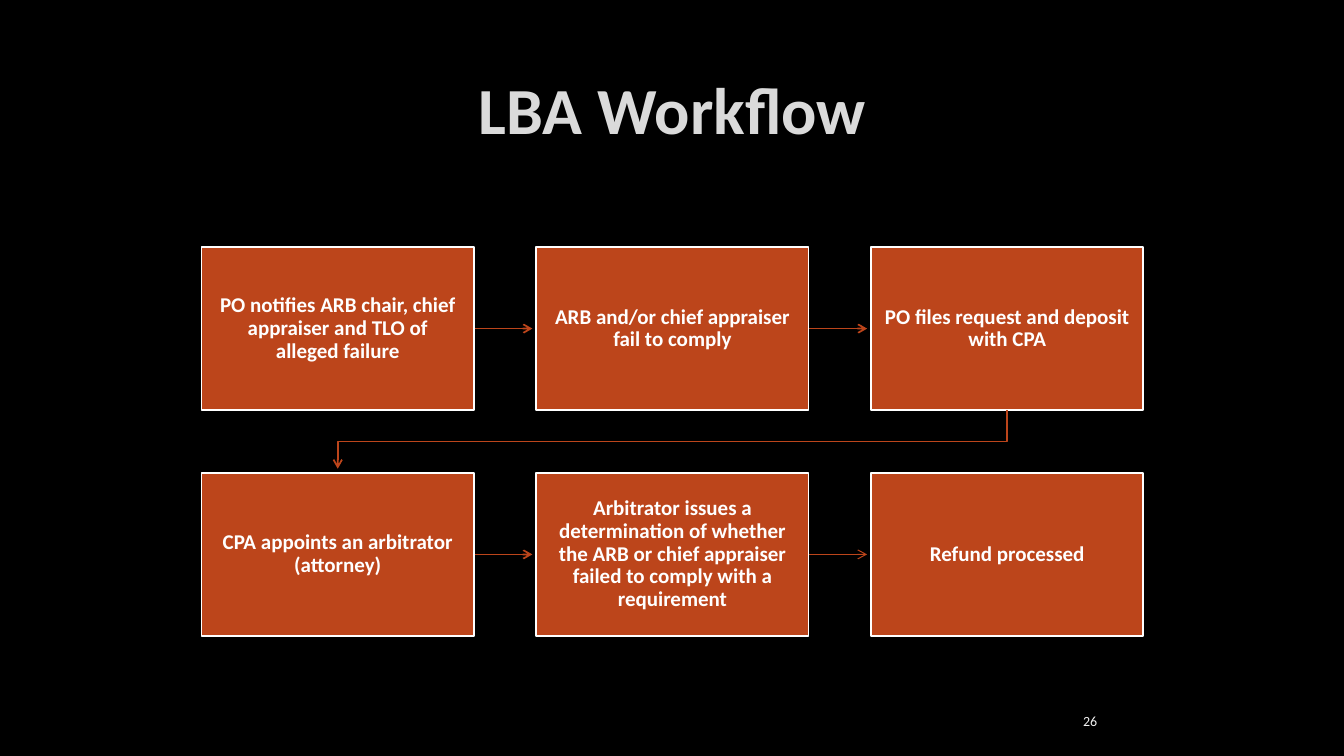
from pptx import Presentation
from pptx.dml.color import RGBColor
from pptx.enum import shapes, text
from pptx.oxml import ns
from pptx.util import Inches, Pt
from lxml import etree


def rgb(value):
    return RGBColor.from_string(value)


def style_arrow(sp, width):
    sp.line.color.rgb = rgb("BC451B")
    sp.line.width = Pt(width)
    ln = sp.line._get_or_add_ln()
    etree.SubElement(ln, ns.qn("a:tailEnd"), type="arrow")


prs = Presentation()
prs.slide_width = Inches(13.33)
prs.slide_height = Inches(7.5)
s = prs.slides.add_slide(prs.slide_layouts[5])
s.background.fill.solid()
s.background.fill.fore_color.rgb = rgb("000000")

title = s.shapes.title
title.left, title.top = Inches(1.99), Inches(0.35)
title.width, title.height = Inches(9.36), Inches(1.45)
title.text_frame.text = "LBA Workflow"
title.text_frame.vertical_anchor = text.MSO_ANCHOR.MIDDLE
p = title.text_frame.paragraphs[0]
p.alignment = text.PP_ALIGN.CENTER
p.font.name = "Calibri"
p.font.size = Pt(47)
p.font.bold = True
p.font.color.rgb = rgb("DADADA")

number = s.shapes.add_textbox(Inches(8.73), Inches(6.95), Inches(2.25), Inches(0.4))
tf = number.text_frame
tf.word_wrap = True
tf.vertical_anchor = text.MSO_ANCHOR.MIDDLE
p = tf.paragraphs[0]
p.text = "26"
p.alignment = text.PP_ALIGN.RIGHT
p.space_after = Pt(6)
p.font.name = "Calibri"
p.font.size = Pt(10)
p.font.color.rgb = rgb("F2F2F2")

steps = [
    "PO notifies ARB chair, chief appraiser and TLO of alleged failure",
    "ARB and/or chief appraiser fail to comply",
    "PO files request and deposit with CPA",
    "CPA appoints an arbitrator (attorney)",
    "Arbitrator issues a determination of whether the ARB or chief appraiser "
    "failed to comply with a requirement",
    "Refund processed",
]
left, top, box_w, box_h = 2, 2.45, 2.7, 1.62
col_step, row_step = 3.32, 2.24

for i, step in enumerate(steps):
    row, col = divmod(i, 3)
    x, y = left + col * col_step, top + row * row_step
    if col < 2:
        mid = Inches(y + box_h / 2)
        arrow = s.shapes.add_connector(
            shapes.MSO_CONNECTOR.STRAIGHT,
            Inches(x + box_w), mid, Inches(x + box_w + 0.58), mid)
        style_arrow(arrow, 0.75 if i == 4 else 1.25)
        etree.SubElement(arrow._element.spPr, ns.qn("a:effectLst"))

    sp = s.shapes.add_shape(shapes.MSO_SHAPE.RECTANGLE,
                            Inches(x), Inches(y), Inches(box_w), Inches(box_h))
    sp.shadow.inherit = False
    sp.fill.solid()
    sp.fill.fore_color.rgb = rgb("BC451B")
    sp.line.color.rgb = rgb("FFFFFF")
    sp.line.width = Pt(1.25)
    tf = sp.text_frame
    tf.word_wrap = True
    tf.vertical_anchor = text.MSO_ANCHOR.MIDDLE
    tf.margin_left = tf.margin_right = Inches(0.13)
    tf.margin_top = tf.margin_bottom = Inches(0.14)
    p = tf.paragraphs[0]
    p.text = step
    p.alignment = text.PP_ALIGN.CENTER
    p.line_spacing = 0.9
    p.font.name = "Calibri"
    p.font.size = Pt(15)
    p.font.bold = True
    p.font.color.rgb = rgb("FFFFFF")

start_x, end_x = Inches(9.99), Inches(3.35)
turn_y = Inches(4.38)
builder = s.shapes.build_freeform(start_x, Inches(4.07))
builder.add_line_segments(
    [(start_x, turn_y), (end_x, turn_y), (end_x, Inches(4.65))], close=False)
row_link = builder.convert_to_shape()
row_link.shadow.inherit = False
row_link.fill.background()
style_arrow(row_link, 1.25)

prs.save("out.pptx")
